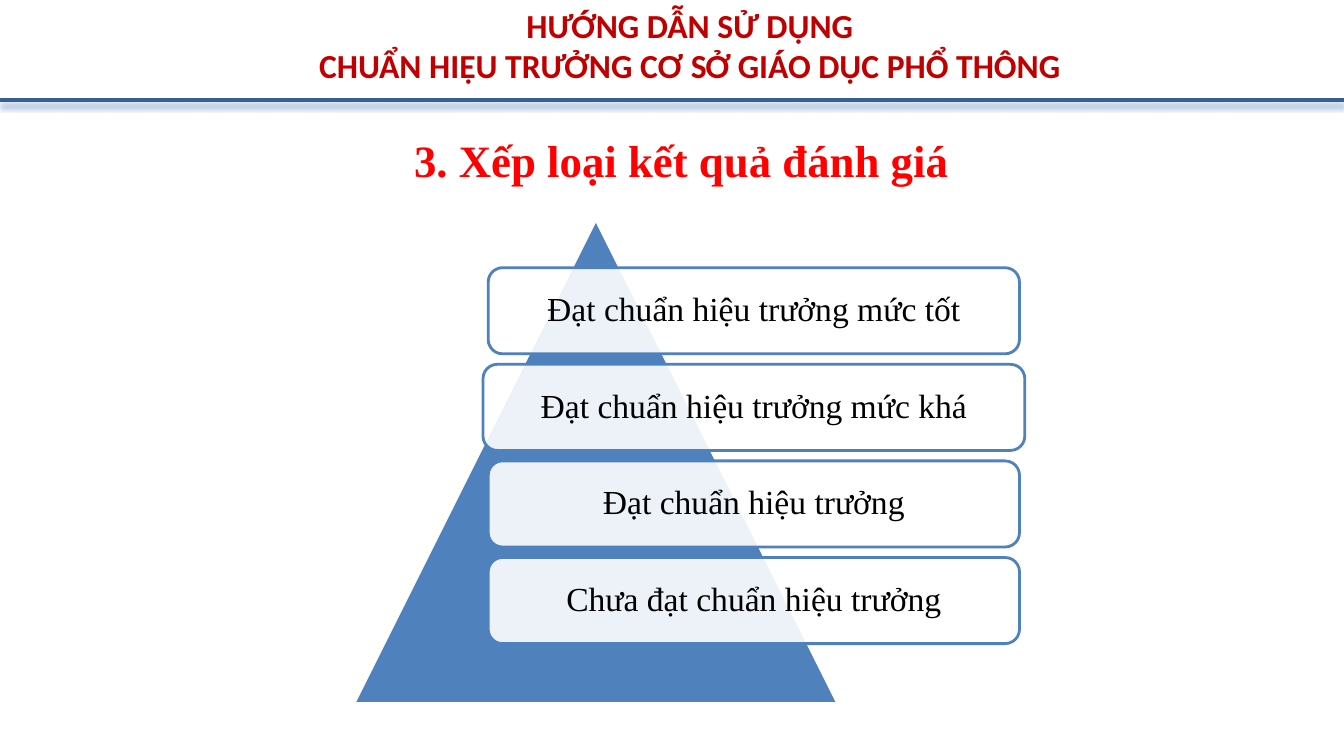
from dataclasses import dataclass

from lxml import etree
from pptx import Presentation
from pptx import util as u
from pptx.dml.color import RGBColor
from pptx.enum import shapes, text
from pptx.oxml.ns import qn

PX = 9525


@dataclass(frozen=True)
class Theme:
    title: str = "C00000"
    heading: str = "FF0000"
    rule: str = "376092"
    glow: str = "95B3D7"
    accent: str = "4F81BD"
    paper: str = "FFFFFF"
    ink: str = "000000"
    sans: str = "Calibri"
    serif: str = "Times New Roman"
    heading_size: int = 32
    body_size: int = 24


T = Theme()
LEVELS = [
    ("Đạt chuẩn hiệu trưởng mức tốt", 506),
    ("Đạt chuẩn hiệu trưởng mức khá", 516),
    ("Đạt chuẩn hiệu trưởng", 506),
    ("Chưa đạt chuẩn hiệu trưởng", 506),
]


def px(*values):
    return [u.Emu(v * PX) for v in values]


def rgb(color):
    return RGBColor.from_string(color)


def write(sp, words, font, size, color, bold=False, margins=(10, 5, 10, 5),
          anchor=text.MSO_ANCHOR.MIDDLE, spacing=1.0):
    tf = sp.text_frame
    tf.word_wrap = True
    tf.auto_size = text.MSO_AUTO_SIZE.NONE
    tf.vertical_anchor = anchor
    tf.margin_left, tf.margin_top, tf.margin_right, tf.margin_bottom = px(*margins)
    tf.text = words
    p = tf.paragraphs[0]
    p.alignment = text.PP_ALIGN.CENTER
    p.line_spacing = spacing
    p.space_before = u.Pt(0)
    for r in p.runs:
        r.font.name = font
        r.font.size = u.Pt(size)
        r.font.bold = bold
        r.font.color.rgb = rgb(color)


def add_solid(s, kind, box, fill, line):
    sp = s.shapes.add_shape(kind, *px(*box))
    sp.shadow.inherit = False
    sp.fill.solid()
    sp.fill.fore_color.rgb = rgb(fill)
    sp.line.color.rgb = rgb(line)
    sp.line.width = u.Pt(2)
    return sp


def add_header(s, x, y, w, h):
    title = s.shapes.title
    title.left, title.top, title.width, title.height = px(x + 149, y - 3, w - 264, h - 11)
    write(title, "HƯỚNG DẪN SỬ DỤNG\vCHUẨN HIỆU TRƯỞNG CƠ SỞ GIÁO DỤC PHỔ THÔNG",
          T.sans, T.body_size, T.title, True, (0, 5, 0, 0), text.MSO_ANCHOR.BOTTOM)
    rule = s.shapes.add_connector(shapes.MSO_CONNECTOR.STRAIGHT,
                                  *px(x, y + h, x + w, y + h))
    rule.line.color.rgb = rgb(T.rule)
    rule.line.width = u.Pt(3)
    effects = etree.SubElement(rule._element.spPr, qn("a:effectLst"))
    shadow = etree.SubElement(effects, qn("a:outerShdw"), blurRad=str(u.Pt(4)),
                              dist=str(u.Pt(4)), dir="5400000", rotWithShape="0")
    etree.SubElement(shadow, qn("a:srgbClr"), val=T.glow)


def add_heading(s, x, y, w, h):
    sp = s.shapes.add_textbox(*px(x, y, w, h))
    write(sp, "3. Xếp loại kết quả đánh giá", T.serif, T.heading_size,
          T.heading, True, (19, 5, 10, 5))


def add_pyramid(s, x, y, side):
    add_solid(s, shapes.MSO_SHAPE.ISOSCELES_TRIANGLE, (x, y, side, side),
              T.accent, T.paper)
    center, top, height, pitch = x + 381, y + 46, 82, 92
    for i, (label, width) in enumerate(LEVELS):
        box = (center - width // 2, top + i * pitch, width, height)
        sp = add_solid(s, shapes.MSO_SHAPE.ROUNDED_RECTANGLE, box, T.paper, T.accent)
        color = sp._element.spPr.find(qn("a:solidFill")).find(qn("a:srgbClr"))
        etree.SubElement(color, qn("a:alpha"), val="90000")
        write(sp, label, T.serif, T.body_size, T.ink, margins=(10, 10, 10, 10),
              spacing=0.9)


def main():
    prs = Presentation()
    prs.slide_width, prs.slide_height = px(1280, 720)
    s = prs.slides.add_slide(prs.slide_layouts[5])
    add_header(s, 0, 0, 1280, 95)
    add_heading(s, 116, 118, 1057, 68)
    add_pyramid(s, 337, 209, 461)
    prs.save("out.pptx")


if __name__ == "__main__":
    main()
